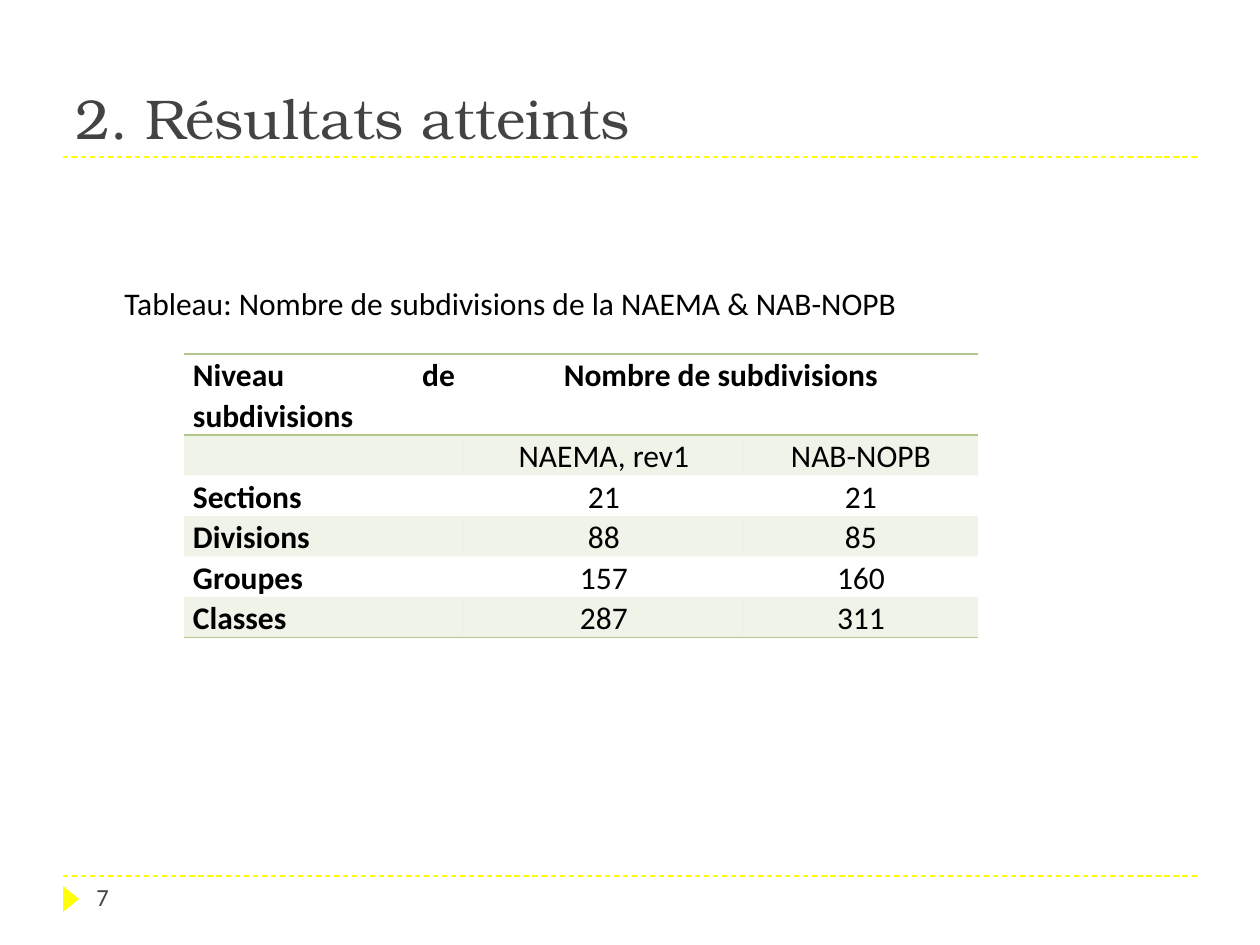
from pptx import Presentation
from pptx.dml.color import RGBColor
from pptx.enum.dml import MSO_LINE
from pptx.enum.shapes import MSO_CONNECTOR, MSO_SHAPE
from pptx.enum.text import MSO_ANCHOR as Anchor, PP_ALIGN as Align
from pptx.oxml import parse_xml
from pptx.oxml.ns import nsdecls, qn
from pptx.util import Pt
from lxml.etree import SubElement

PX = 914400 / 126
YELLOW = RGBColor(0xFF, 0xFF, 0x00)
GREY = RGBColor(0x43, 0x43, 0x42)
BLACK = RGBColor(0x00, 0x00, 0x00)
GREEN = RGBColor(0xB2, 0xC7, 0x8C)
BODY_FONT = "Calibri"
TITLE_FONT = "TeX Gyre Bonum"
PLAIN_TABLE = "{2D5ABB26-0587-4C30-8999-92F81FD0307C}"
LINE_SPACING = 1.07


def emu(*lengths):
    return [round(length * PX) for length in lengths]


class SlideBuilder:
    def __init__(self, page):
        self.page = page

    def style(self, para, size, color, font=BODY_FONT, bold=False, align=Align.LEFT):
        para.alignment = align
        para.font.size = Pt(size)
        para.font.name = font
        para.font.bold = bold
        para.font.color.rgb = color

    def text(self, words, place, size, color, font=BODY_FONT, anchor=Anchor.TOP,
             align=Align.LEFT, spacing=None, wrap=True):
        box = self.page.shapes.add_textbox(*emu(*place))
        frame = box.text_frame
        frame.word_wrap = wrap
        frame.vertical_anchor = anchor
        para = frame.paragraphs[0]
        para.text = words
        para.line_spacing = spacing
        self.style(para, size, color, font, align=align)

    def rule(self, left, right, y):
        line = self.page.shapes.add_connector(MSO_CONNECTOR.STRAIGHT, *emu(left, y, right, y))
        line.line.color.rgb = YELLOW
        line.line.width = Pt(0.75)
        line.line.dash_style = MSO_LINE.DASH
        SubElement(line._element.spPr, qn("a:effectLst"))

    def marker(self, place):
        triangle = self.page.shapes.add_shape(MSO_SHAPE.ISOSCELES_TRIANGLE, *emu(*place))
        triangle.rotation = 90
        triangle.shadow.inherit = False
        triangle.fill.solid()
        triangle.fill.fore_color.rgb = YELLOW
        triangle.line.fill.background()

    def border(self, cell, side):
        cell._tc.get_or_add_tcPr().append(parse_xml(
            f'<a:{side} {nsdecls("a")} w="12700"><a:solidFill>'
            f'<a:srgbClr val="{GREEN}"/></a:solidFill></a:{side}>'))

    def tint(self, cell):
        cell.fill.solid()
        cell.fill.fore_color.rgb = GREEN
        color = cell._tc.tcPr.find(qn("a:solidFill")).find(qn("a:srgbClr"))
        SubElement(color, qn("a:alpha")).set("val", "20000")

    def cell(self, cell, words, bold, align):
        cell.margin_left, cell.margin_right = emu(9, 9)
        cell.margin_top = cell.margin_bottom = 0
        para = cell.text_frame.paragraphs[0]
        para.text = words
        para.line_spacing = LINE_SPACING
        self.style(para, 18, BLACK, bold=bold, align=align)

    def table(self, rows, left, top, widths, heights):
        frame = self.page.shapes.add_table(
            len(rows), len(widths), *emu(left, top, sum(widths), sum(heights)))
        table = frame.table
        table.first_row = table.horz_banding = False
        table._tbl.tblPr.find(qn("a:tableStyleId")).text = PLAIN_TABLE
        for column, width in zip(table.columns, emu(*widths)):
            column.width = width
        for row, height in zip(table.rows, emu(*heights)):
            row.height = height
        last = len(rows) - 1
        for i, row in enumerate(rows):
            for j, words in enumerate(row):
                cell = table.cell(i, j)
                self.cell(cell, words, i == 0 or j == 0,
                          Align.CENTER if j else Align.JUSTIFY)
                if i == 0:
                    self.border(cell, "lnT")
                if i in (0, last):
                    self.border(cell, "lnB")
                if i % 2:
                    self.tint(cell)
                else:
                    cell.fill.background()
        table.cell(0, 1).merge(table.cell(0, 2))


def main():
    deck = Presentation()
    deck.slide_width, deck.slide_height = emu(1260, 945)
    builder = SlideBuilder(deck.slides.add_slide(deck.slide_layouts[6]))

    # Rules and page marker
    for y in (876, 157):
        builder.rule(63, 1197, y)
    builder.marker((58, 891, 26, 16))

    # Title and page number
    builder.text("2. Résultats atteints", (63, 31, 1134, 126), 32, GREY,
                 font=TITLE_FONT, anchor=Anchor.BOTTOM)
    builder.text("7", (84, 876, 273, 50), 14, GREY)

    # Table of subdivisions with its caption
    builder.table([
        ("Niveau de subdivisions", "Nombre de subdivisions", ""),
        ("", "NAEMA, rev1", "NAB-NOPB"),
        ("Sections", "21", "21"),
        ("Divisions", "88", "85"),
        ("Groupes", "157", "160"),
        ("Classes", "287", "311"),
    ], 184, 354, (280, 280, 234), [33] * 5 + [23])
    builder.text("Tableau: Nombre de subdivisions de la NAEMA & NAB-NOPB",
                 (96, 275, 829, 52), 18, BLACK, align=Align.CENTER,
                 spacing=LINE_SPACING, wrap=False)

    deck.save("out.pptx")


if __name__ == "__main__":
    main()
